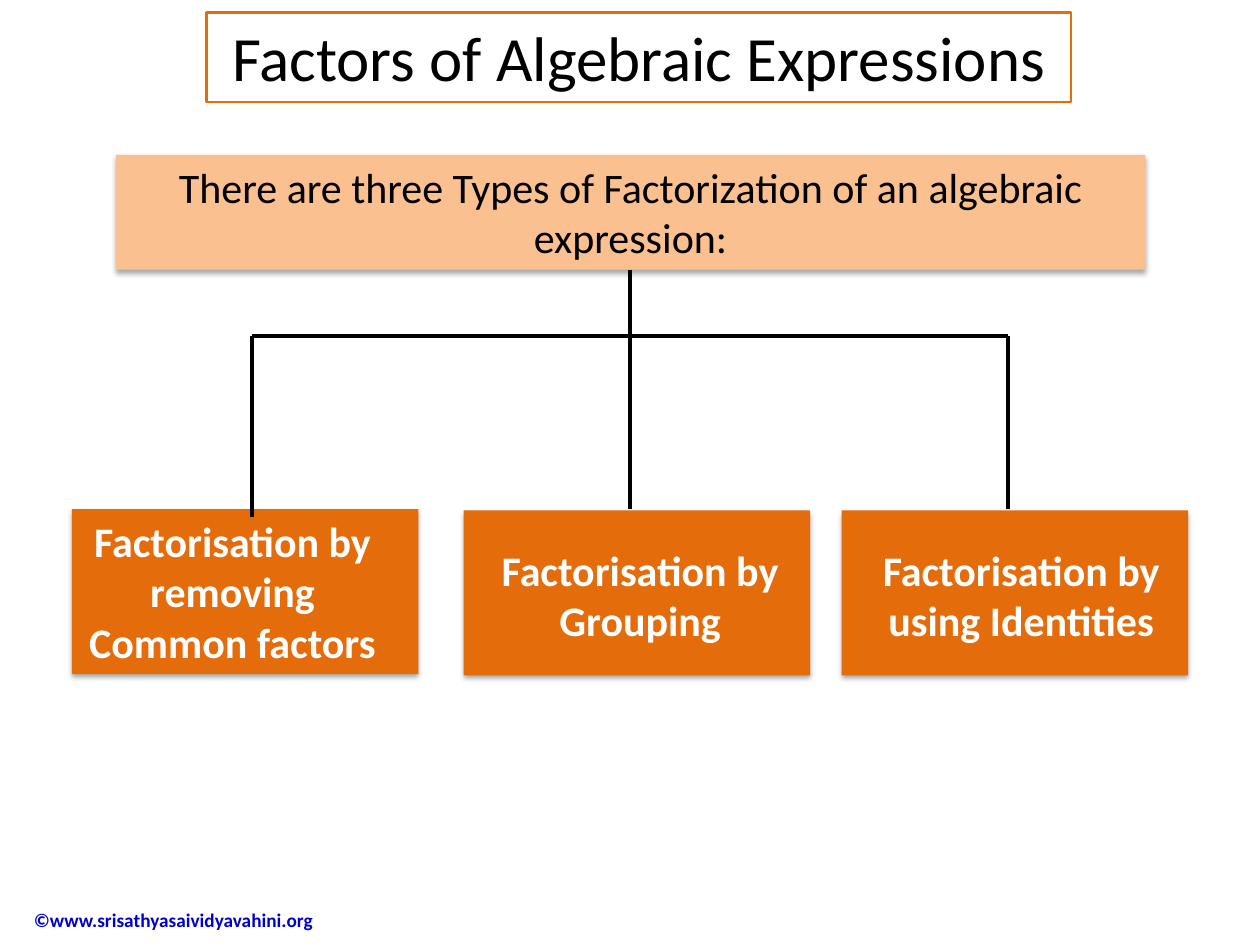
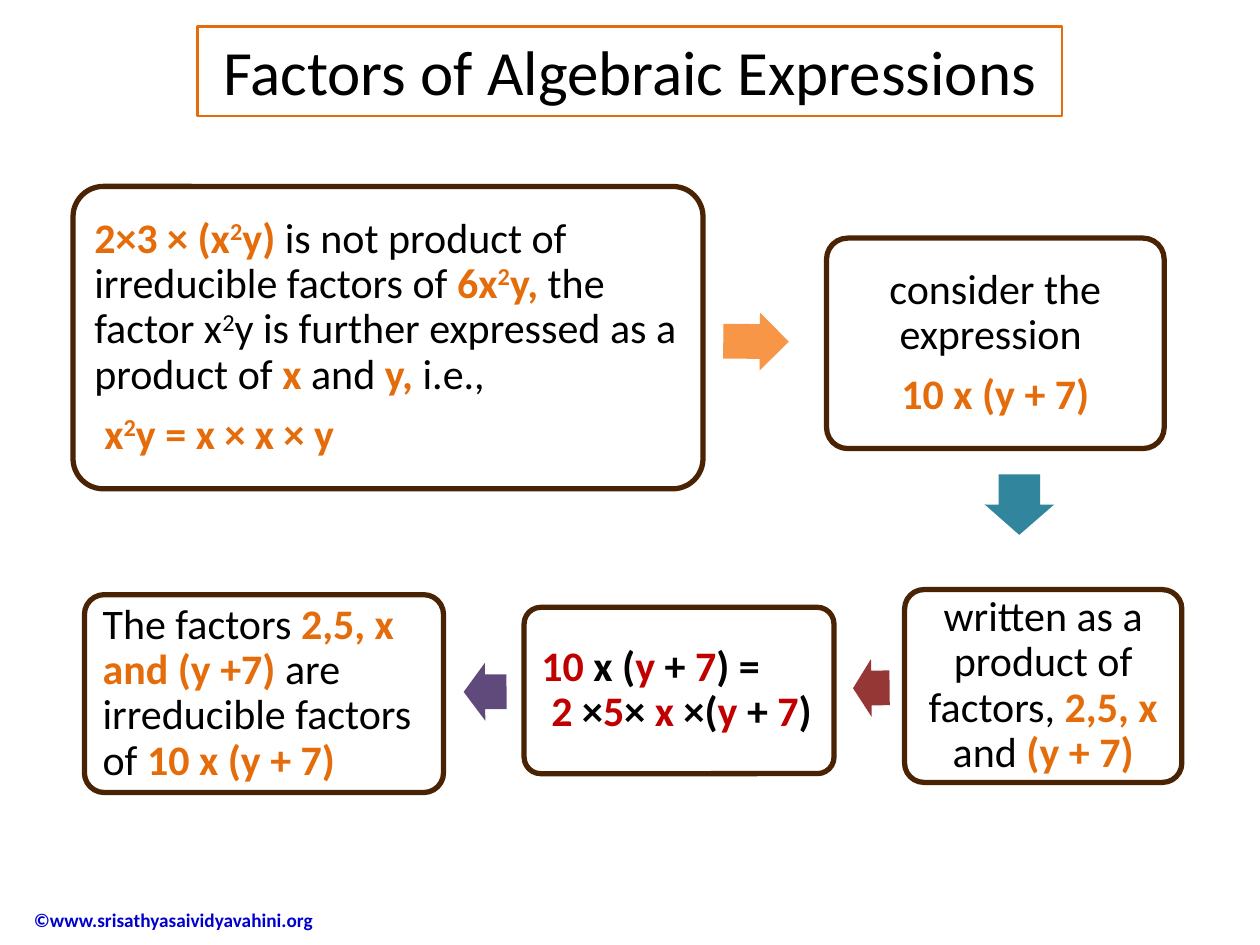
"""Build two slides on the factors of algebraic expressions."""
from lxml import etree
from pptx import Presentation
from pptx.dml.color import RGBColor
from pptx.enum.shapes import MSO_CONNECTOR as Connector, MSO_SHAPE as Shape
from pptx.enum.text import MSO_ANCHOR as Anchor, PP_ALIGN as Align
from pptx.oxml.ns import qn
from pptx.util import Inches, Pt

BLACK = RGBColor(0x00, 0x00, 0x00)
WHITE = RGBColor(0xFF, 0xFF, 0xFF)
ORANGE = RGBColor(0xE4, 0x6C, 0x0A)
PEACH = RGBColor(0xFA, 0xC0, 0x90)
BROWN = RGBColor(0x49, 0x23, 0x03)
RED = RGBColor(0xC0, 0x00, 0x00)
NAVY = RGBColor(0x00, 0x00, 0xCC)
AMBER = RGBColor(0xF7, 0x96, 0x46)
TEAL = RGBColor(0x31, 0x85, 0x9C)
MAROON = RGBColor(0x95, 0x37, 0x35)
PURPLE = RGBColor(0x60, 0x4A, 0x7B)

TITLE = "Factors of Algebraic Expressions"
FOOTER = "©www.srisathyasaividyavahini.org"
INTRO = "There are three Types of Factorization of an algebraic expression:"
INTRO_BOX = (0.92, 1.23, 8.17, 0.91)

METHOD_SIZE = (2.75, 1.31)
METHODS = [
    ("Factorisation by removing Common factors", (0.57, 4.04), (0.47, 4.04, 2.75, 1.31)),
    ("Factorisation by Grouping", (3.68, 4.05), (3.87, 4.27, 2.42, 0.91)),
    ("Factorisation by using Identities", (6.68, 4.05), (6.73, 4.27, 2.75, 0.91)),
]
FORK_Y = 2.67
DROPS = [(2, 4.1), (5, 4.04), (8, 4.04)]

STEPS = [
    ((0.58, 1.48, 5, 2.4), Align.LEFT, [
        [("2×3 × (x²y) ", ORANGE), ("is not product of irreducible factors of ", BLACK),
         ("6x²y, ", ORANGE), ("the factor x²y is further expressed as a product of ", BLACK),
         ("x ", ORANGE), ("and ", BLACK), ("y, ", ORANGE), ("i.e.,", BLACK)],
        [("x²y = x × x × y", ORANGE)]], {"last_indent": 0.08}),
    ((6.56, 1.89, 2.68, 1.67), Align.CENTER, [
        [("consider the expression ", BLACK)],
        [("10 x (y + 7)", ORANGE)]], {}),
    ((7.18, 4.68, 2.2, 1.53), Align.CENTER, [
        [("written as a product of factors, ", BLACK), ("2,5, x ", ORANGE),
         ("and ", BLACK), ("(y + 7)", ORANGE)]], {}),
    ((4.16, 4.82, 2.46, 1.32), Align.LEFT, [
        [("10", RED), (" x (", BLACK), ("y", RED), (" + ", BLACK), ("7", RED), (") =", BLACK)],
        [("2 ", RED), ("×", BLACK), ("5", RED), ("× ", BLACK), ("x", RED), (" ×(", BLACK),
         ("y", RED), (" + ", BLACK), ("7", RED), (")", BLACK)]],
     {"bold": True, "gap": 0, "last_indent": 0.08}),
    ((0.67, 4.72, 2.85, 1.57), Align.LEFT, [
        [("The factors ", BLACK), ("2,5, x and (y +7) ", ORANGE),
         ("are irreducible factors of ", BLACK), ("10 x (y + 7)", ORANGE)]], {}),
]
ARROWS = [
    ((5.74, 2.48, 0.52, 0.46), 0.4, AMBER),
    ((7.85, 3.73, 0.48, 0.55), 90.2, TEAL),
    ((6.77, 5.23, 0.29, 0.46), 179.3, MAROON),
    ((3.68, 5.26, 0.34, 0.46), 179.6, PURPLE),
]


def write(shape, paragraphs, size=24, bold=None, align=Align.CENTER, anchor=Anchor.TOP,
          wrap=True, spacing=None, gap=0, last_indent=0, margin_y=0.05):
    """Write paragraphs of (text, colour) runs; ² becomes a raised 2 and orange is bold."""
    frame = shape.text_frame
    frame.word_wrap = wrap
    frame.vertical_anchor = anchor
    frame.margin_left = frame.margin_right = Inches(0.1)
    frame.margin_top = frame.margin_bottom = Inches(margin_y)
    for index, runs in enumerate(paragraphs):
        paragraph = frame.add_paragraph() if index else frame.paragraphs[0]
        paragraph.alignment = align
        paragraph.line_spacing = spacing
        if index:
            paragraph.space_before = Pt(gap)
        if index and last_indent:
            paragraph._p.get_or_add_pPr().set("marL", str(Inches(last_indent)))
        for text, color in runs:
            for part in text.replace("²", "|²|").split("|"):
                if not part:
                    continue
                run = paragraph.add_run()
                run.text = part.replace("²", "2")
                font = run.font
                font.name, font.size = "Calibri", Pt(size)
                font.bold = color == ORANGE if bold is None else bold
                font.color.rgb = color
                if part == "²":
                    font._element.set("baseline", "30000")


def add_box(slide, kind, box, fill=None, line=None, width=1.5):
    shape = slide.shapes.add_shape(kind, *map(Inches, box))
    shape.shadow.inherit = False
    if fill is None:
        shape.fill.background()
    else:
        shape.fill.solid()
        shape.fill.fore_color.rgb = fill
    if line is None:
        shape.line.fill.background()
    else:
        shape.line.color.rgb = line
        shape.line.width = Pt(width)
    return shape


def cast_shadow(shape):
    effects = shape._element.spPr.find(qn("a:effectLst"))
    shadow = etree.SubElement(effects, qn("a:outerShdw"), blurRad=str(Pt(3.1)),
                              dist=str(Pt(1.8)), dir="5400000", rotWithShape="0")
    color = etree.SubElement(shadow, qn("a:srgbClr"), val="000000")
    etree.SubElement(color, qn("a:alpha"), val="35000")


def add_label(slide, text, box, color, **style):
    write(slide.shapes.add_textbox(*map(Inches, box)), [[(text, color)]], **style)


def add_line(slide, *ends):
    line = slide.shapes.add_connector(Connector.STRAIGHT, *map(Inches, ends))
    line.line.color.rgb = BLACK
    line.line.width = Pt(2.25)
    etree.SubElement(line._element.spPr, qn("a:effectLst"))


def add_slide(deck, title_left, title_top):
    slide = deck.slides.add_slide(deck.slide_layouts[6])
    add_label(slide, FOOTER, (0.17, 7.1, 2.52, 0.41 - 0.01), NAVY, size=11, bold=True,
              align=Align.LEFT, anchor=Anchor.MIDDLE)
    title = add_box(slide, Shape.RECTANGLE, (title_left, title_top, 6.86, 0.71), line=ORANGE)
    write(title, [[(TITLE, BLACK)]], size=36, wrap=False)
    return slide


def build_types(deck):
    slide = add_slide(deck, 1.64, 0.1)
    intro = add_box(slide, Shape.RECTANGLE, INTRO_BOX, fill=PEACH)
    cast_shadow(intro)
    write(intro, [[(INTRO, BLACK)]])
    for _, corner, _ in METHODS:
        cast_shadow(add_box(slide, Shape.RECTANGLE, corner + METHOD_SIZE, fill=ORANGE))
    add_line(slide, 5, 2.14, 5, FORK_Y)
    add_line(slide, DROPS[0][0], FORK_Y, DROPS[-1][0], FORK_Y)
    for x, bottom in DROPS:
        add_line(slide, x, FORK_Y, x, bottom)
    for text, _, label_box in METHODS:
        add_label(slide, text, label_box, WHITE, bold=True)


def build_steps(deck):
    slide = add_slide(deck, 1.57, 0.21)
    for box, align, paragraphs, style in STEPS:
        step = add_box(slide, Shape.ROUNDED_RECTANGLE, box, fill=WHITE, line=BROWN, width=3)
        step.adjustments[0] = 0.1
        write(step, paragraphs, **{"align": align, "anchor": Anchor.MIDDLE, "spacing": 0.9,
                                   "gap": 8.4, "margin_y": 0.1, **style})
    for box, angle, color in ARROWS:
        arrow = add_box(slide, Shape.RIGHT_ARROW, box, fill=color)
        arrow.adjustments[0], arrow.adjustments[1] = 0.6, 0.5
        arrow.rotation = angle


def main():
    deck = Presentation()
    deck.slide_width, deck.slide_height = Inches(10), Inches(7.5)
    build_types(deck)
    build_steps(deck)
    deck.save("out.pptx")


if __name__ == "__main__":
    main()
